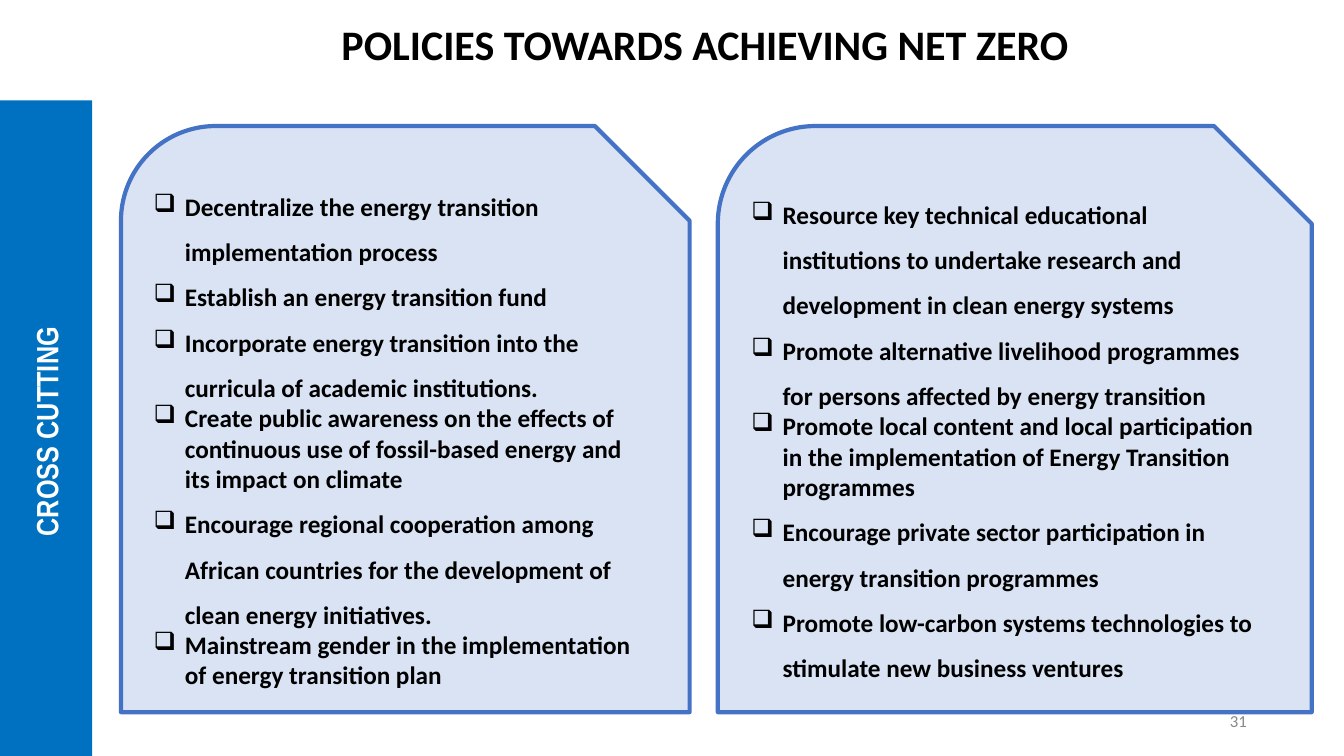
import pptx
import pptx.dml.color
import pptx.enum.shapes
import pptx.enum.text
import pptx.oxml.ns
import pptx.util
import lxml.etree

RGB = pptx.dml.color.RGBColor
FORM = pptx.enum.shapes.MSO_SHAPE
ALIGN = pptx.enum.text.PP_ALIGN
ANCHOR = pptx.enum.text.MSO_ANCHOR

BLUE = RGB(0x00, 0x70, 0xC0)
EDGE = RGB(0x44, 0x72, 0xC4)
PALE = RGB(0xDA, 0xE3, 0xF3)
GREY = RGB(0x88, 0x88, 0x88)
BLACK = RGB(0, 0, 0)
WHITE = RGB(255, 255, 255)

WIDE, TIGHT = 1.5, 1.0
INDENT = pptx.util.Inches(0.62)
CARD_TOP, CARD_HIGH = 16.67, 77.53

LEFT = [
    ("Decentralize the energy transition implementation process", WIDE),
    ("Establish an energy transition fund", WIDE),
    ("Incorporate energy transition into the curricula of academic institutions.", WIDE),
    ("Create public awareness on the effects of continuous use of fossil-based "
     "energy and its impact on climate", TIGHT),
    ("Encourage regional cooperation among African countries for the development "
     "of clean energy initiatives.", WIDE),
    ("Mainstream gender in the implementation of energy transition plan", TIGHT),
]
RIGHT = [
    ("Resource key technical educational institutions to undertake research and "
     "development in clean energy systems", WIDE),
    ("Promote alternative livelihood programmes for persons affected by energy "
     "transition", WIDE),
    ("Promote local content and local participation in the implementation of "
     "Energy Transition programmes", TIGHT),
    ("Encourage private sector participation in energy transition programmes", WIDE),
    ("Promote low-carbon systems technologies to stimulate new business ventures", WIDE),
]


def write(para, text, size=36, face="Calibri", color=BLACK, bold=True,
          align=ALIGN.LEFT, space=TIGHT, mark=None):
    """Fill a paragraph with one run; mark is its hanging bullet."""
    if mark:
        props = para._p.get_or_add_pPr()
        props.set("marL", str(INDENT))
        props.set("indent", str(-INDENT))
        tag = pptx.oxml.ns.qn("a:buChar")
        lxml.etree.SubElement(props, tag).set("char", mark)
    para.alignment = align
    para.line_spacing = space
    run = para.add_run()
    run.text = text
    run.font.size = pptx.util.Pt(size)
    run.font.name = face
    run.font.bold = bold
    run.font.color.rgb = color


class Deck:
    """Holds the slide; all boxes are (left, top, width, height) in percent of it."""

    def __init__(self, show):
        self.wide, self.high = show.slide_width, show.slide_height
        self.slide = show.slides.add_slide(show.slide_layouts[6])

    def place(self, box):
        sides = (self.wide, self.high) * 2
        return [round(side * part / 100) for side, part in zip(sides, box)]

    def shape(self, form, box, fill, line=None):
        item = self.slide.shapes.add_shape(form, *self.place(box))
        item.shadow.inherit = False
        item.fill.solid()
        item.fill.fore_color.rgb = fill
        if line is None:
            item.line.fill.background()
        else:
            item.line.color.rgb = line
            item.line.width = pptx.util.Pt(6)
        item.text_frame.word_wrap = True
        item.text_frame.vertical_anchor = ANCHOR.MIDDLE
        return item

    def label(self, box, text, anchor=ANCHOR.TOP, **style):
        frame = self.slide.shapes.add_textbox(*self.place(box)).text_frame
        frame.word_wrap = True
        frame.vertical_anchor = anchor
        write(frame.paragraphs[0], text, **style)

    def banner(self, box, text):
        """Side bar whose text reads upward."""
        item = self.shape(FORM.RECTANGLE, box, BLUE)
        item.element.txBody.bodyPr.set("vert", "vert270")
        write(item.text_frame.paragraphs[0], text, size=44, face="Arial Narrow",
              color=WHITE, align=ALIGN.CENTER)

    def card(self, box, points):
        item = self.shape(FORM.SNIP_ROUND_RECTANGLE, box, PALE, EDGE)
        frame = item.text_frame
        for count, (text, space) in enumerate(points):
            para = frame.add_paragraph() if count else frame.paragraphs[0]
            write(para, text, space=space, mark="❑")


def main():
    show = pptx.Presentation()
    show.slide_width = pptx.util.Inches(26.66)
    show.slide_height = pptx.util.Inches(15)
    deck = Deck(show)
    deck.banner((0, 13.27, 6.86, 86.73), "CROSS CUTTING ")
    deck.label((70.63, 92.67, 22.51, 5.33), "31", anchor=ANCHOR.MIDDLE,
               size=24, color=GREY, bold=False, align=ALIGN.RIGHT)
    for left, width, points in ((9, 42.31, LEFT), (53.41, 44.19, RIGHT)):
        deck.card((left, CARD_TOP, width, CARD_HIGH), points)
    deck.label((14.78, 2.13, 75.36, 7.4), "POLICIES TOWARDS ACHIEVING NET ZERO",
               size=60, align=ALIGN.CENTER)
    show.save("out.pptx")


if __name__ == "__main__":
    main()
